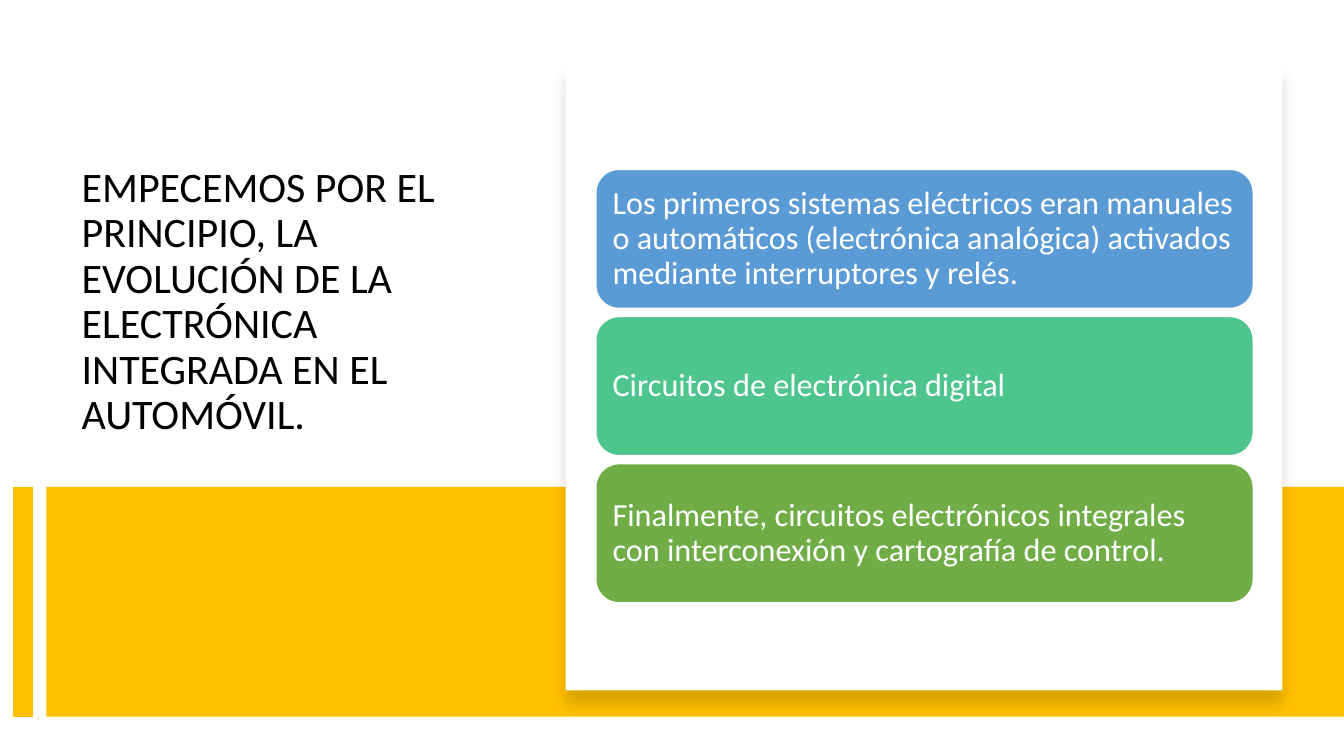
from dataclasses import dataclass

import pptx
import pptx.dml.color
import pptx.enum.shapes
import pptx.enum.text
import pptx.oxml
import pptx.oxml.ns
import pptx.util

EMU_PER_PX = 9144  # 100 px to the inch
SHAPES = pptx.enum.shapes.MSO_SHAPE
ANCHORS = pptx.enum.text.MSO_ANCHOR


@dataclass(frozen=True)
class Theme:
    font: str = "Calibri"
    title_size: int = 30
    stage_size: int = 23
    black: str = "000000"
    white: str = "FFFFFF"
    amber: str = "FFC000"
    blue: str = "5B9BD5"
    teal: str = "4DC58D"
    green: str = "70AD47"


THEME = Theme()
TITLE = ("EMPECEMOS POR EL PRINCIPIO, LA EVOLUCIÓN DE LA ELECTRÓNICA "
         "INTEGRADA EN EL AUTOMÓVIL.")
STAGES = [
    ("Los primeros sistemas eléctricos eran manuales o automáticos (electrónica "
     "analógica) activados mediante interruptores y relés.", THEME.blue),
    ("Circuitos de electrónica digital", THEME.teal),
    ("Finalmente, circuitos electrónicos integrales con interconexión y "
     "cartografía de control.", THEME.green),
]


def px(*lengths):
    return [pptx.util.Emu(length * EMU_PER_PX) for length in lengths]


def rgb(color):
    return pptx.dml.color.RGBColor.from_string(color)


def write_text(shape, text, *, size, color, anchor, margins):
    """Fill a shape with one left-aligned paragraph; margins are (x, y) in px."""
    frame = shape.text_frame
    frame.word_wrap = True
    frame.auto_size = pptx.enum.text.MSO_AUTO_SIZE.NONE
    frame.vertical_anchor = anchor
    frame.margin_left = frame.margin_right = px(margins[0])[0]
    frame.margin_top = frame.margin_bottom = px(margins[1])[0]
    para = frame.paragraphs[0]
    para.alignment = pptx.enum.text.PP_ALIGN.LEFT
    para.line_spacing = 0.9
    span = para.add_run()
    span.text = text
    span.font.name = THEME.font
    span.font.size = pptx.util.Pt(size)
    span.font.color.rgb = rgb(color)


def add_title(page, text, box):
    title = page.shapes.title
    title.left, title.top, title.width, title.height = px(*box)
    write_text(title, text, size=THEME.title_size, color=THEME.black,
               anchor=ANCHORS.TOP, margins=(10, 5))


def add_box(page, kind, box, fill, outline=None):
    shape = page.shapes.add_shape(kind, *px(*box))
    shape.shadow.inherit = False
    shape.fill.solid()
    shape.fill.fore_color.rgb = rgb(fill)
    if outline:
        shape.line.color.rgb = rgb(outline)
        shape.line.width = pptx.util.Pt(1)
    else:
        shape.line.fill.background()
    return shape


def add_bar(page, start, end, color, width):
    bar = page.shapes.add_connector(
        pptx.enum.shapes.MSO_CONNECTOR.STRAIGHT, *px(*start, *end))
    bar.line.color.rgb = rgb(color)
    bar.line.width = pptx.util.Pt(width)
    bar._element.spPr.append(pptx.oxml.parse_xml(
        f'<a:effectLst {pptx.oxml.ns.nsdecls("a")}/>'))


def cast_shadow(shape, *, blur, distance, opacity):
    """Cast a soft black shadow downwards; blur and distance are in points."""
    effects = shape._element.spPr.find(pptx.oxml.ns.qn("a:effectLst"))
    effects.append(pptx.oxml.parse_xml(
        f'<a:outerShdw {pptx.oxml.ns.nsdecls("a")} blurRad="{pptx.util.Pt(blur)}" '
        f'dist="{pptx.util.Pt(distance)}" dir="5400000" algn="t" rotWithShape="0">'
        f'<a:srgbClr val="{THEME.black}"><a:alpha val="{opacity * 1000}"/></a:srgbClr>'
        '</a:outerShdw>'))


def add_stages(page, stages, *, left, top, width, height, pitch):
    for index, (text, fill) in enumerate(stages):
        box = (left, top + index * pitch, width, height)
        stage = add_box(page, SHAPES.ROUNDED_RECTANGLE, box, fill, THEME.white)
        write_text(stage, text, size=THEME.stage_size, color=THEME.white,
                   anchor=ANCHORS.MIDDLE, margins=(10, 10))


def main():
    deck = pptx.Presentation()
    deck.slide_width, deck.slide_height = px(1333, 750)
    page = deck.slides.add_slide(deck.slide_layouts.get_by_name("Title Only"))

    add_title(page, TITLE, (71, 160, 415, 294))
    add_box(page, SHAPES.RECTANGLE, (46, 483, 1287, 228), THEME.amber)
    add_bar(page, (23, 483), (23, 711), THEME.amber, 14)
    card = add_box(page, SHAPES.RECTANGLE, (561, 64, 711, 621), THEME.white)
    cast_shadow(card, blur=11, distance=10, opacity=15)
    add_stages(page, STAGES, left=591, top=168, width=652, height=138, pitch=146)

    deck.save("out.pptx")


if __name__ == "__main__":
    main()
